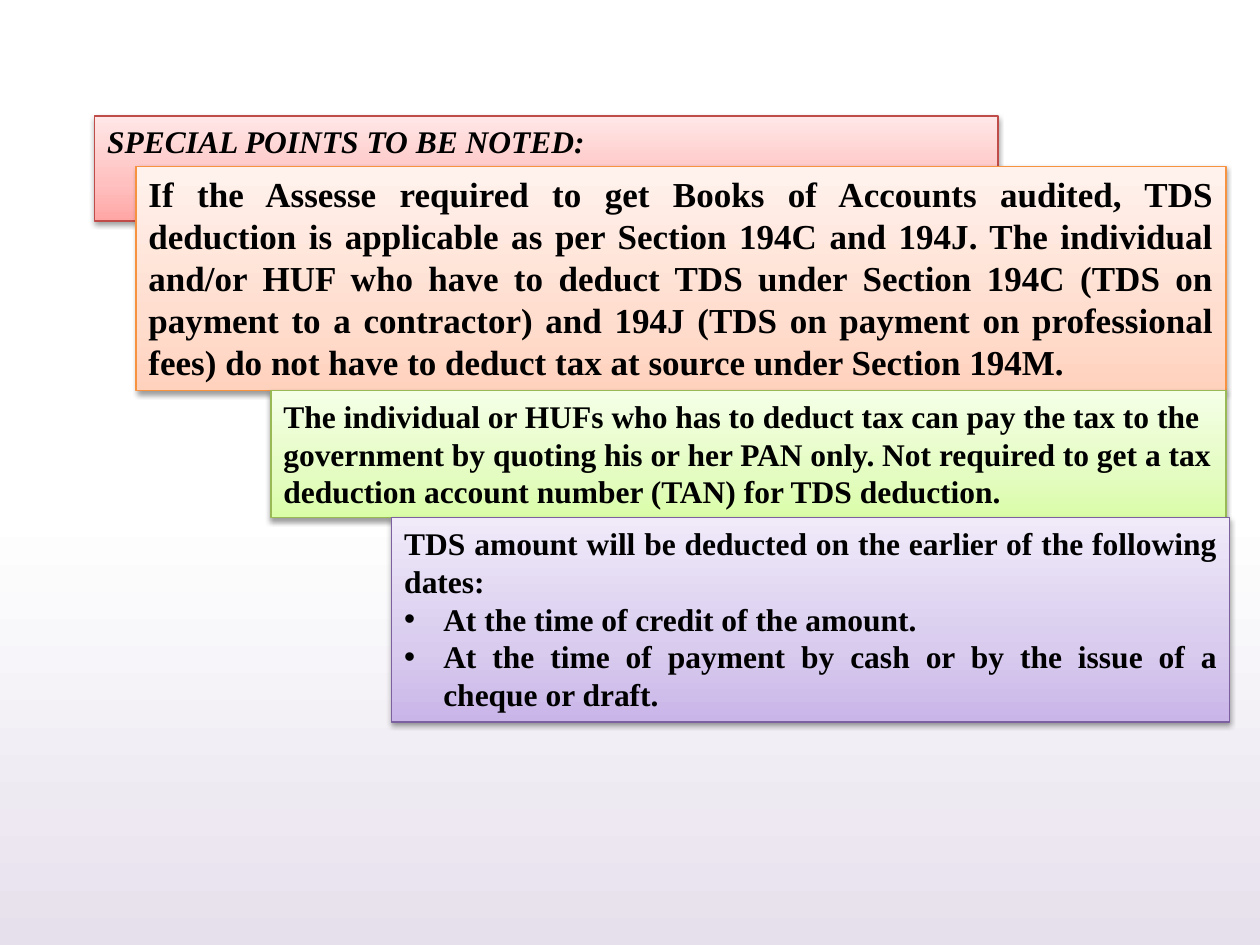
"""Build a slide of four stepped boxes with special points on TDS."""
from lxml.etree import SubElement
from pptx import Presentation
from pptx.dml.color import RGBColor
from pptx.enum.shapes import MSO_SHAPE as Shape
from pptx.enum.text import MSO_ANCHOR as Anchor, MSO_AUTO_SIZE as AutoSize, PP_ALIGN as Align
from pptx.oxml.ns import qn
from pptx.util import Inches, Pt

BACKGROUND = [(0, "FFFFFF"), (54, "FFFFFF"), (100, "E6E0EC")]
TOP = 0.92
INDENT = 0.31
BULLET = "•"
HEADING = dict(
    left=0.75, width=7.17, height=0.4, size=18, align=Align.LEFT, line="BF4C48",
    colors=("FFA6A5", "FFC0BF", "FFE7E7"), text=["SPECIAL POINTS TO BE NOTED:"])
POINTS = [
    dict(left=1.08, width=8.65, height=1.78, size=20, align=Align.JUSTIFY, line="F69240",
         colors=("FFD2BD", "FFDED0", "FFF2ED"),
         text=["If the Assesse required to get Books of Accounts audited, TDS deduction is "
               "applicable as per Section 194C and 194J. The individual and/or HUF who have to "
               "deduct TDS under Section 194C (TDS on payment to a contractor) and 194J (TDS on "
               "payment on professional fees) do not have to deduct tax at source under "
               "Section 194M."]),
    dict(left=2.15, width=7.58, height=1.01, size=18, align=Align.LEFT, line="98B955",
         colors=("DAFDA7", "E4FCC2", "F5FFE7"),
         text=["The individual or HUFs who has to deduct tax can pay the tax to the government "
               "by quoting his or her PAN only. Not required to get a tax deduction account "
               "number (TAN) for TDS deduction."]),
    dict(left=3.11, width=6.65, height=1.62, size=18, align=Align.JUSTIFY, line="7D60A0",
         colors=("C9B5E8", "D8CBEE", "F0EAF9"),
         text=["TDS amount will be deducted on the earlier of the following dates:"],
         bullets=["At the time of credit of the amount.",
                  "At the time of payment by cash or by the issue of a cheque or draft."]),
]


def rgb(color):
    """Turn a hex string into a colour."""
    return RGBColor.from_string(color)


def set_gradient(fill, owner, stops, angle):
    """Give a fill gradient stops at percentages."""
    fill.gradient()
    fill.gradient_angle = angle
    stop_list = owner.find(".//" + qn("a:gsLst"))
    for stop in list(stop_list):
        stop_list.remove(stop)
    for position, color in stops:
        stop = SubElement(stop_list, qn("a:gs"), pos=str(position * 1000))
        SubElement(stop, qn("a:srgbClr"), val=color)


def add_shadow(shape):
    """Put a soft shadow below a shape."""
    shape.shadow.inherit = False
    effects = shape._element.spPr.find(qn("a:effectLst"))
    shadow = SubElement(effects, qn("a:outerShdw"), blurRad=str(Pt(3.1)), dist=str(Pt(1.6)),
                        dir="5400000", rotWithShape="0")
    color = SubElement(shadow, qn("a:srgbClr"), val="000000")
    SubElement(color, qn("a:alpha"), val="38000")


def add_bullet(paragraph):
    """Give a paragraph a hanging bullet."""
    properties = paragraph._p.get_or_add_pPr()
    properties.set("marL", str(Inches(INDENT)))
    properties.set("indent", str(Inches(-INDENT)))
    SubElement(properties, qn("a:buFont"), typeface="Arial")
    SubElement(properties, qn("a:buChar"), char=BULLET)


def fill_box(shape, box, italic=False):
    """Format a box and write its paragraphs."""
    set_gradient(shape.fill, shape._element.spPr, zip((0, 35, 100), box["colors"]), 90)
    shape.line.color.rgb = rgb(box["line"])
    shape.line.width = Pt(0.75)
    add_shadow(shape)
    frame = shape.text_frame
    frame.word_wrap = True
    frame.auto_size = AutoSize.SHAPE_TO_FIT_TEXT
    frame.vertical_anchor = Anchor.TOP
    bullets = box.get("bullets", [])
    frame.text = "\n".join(box["text"] + bullets)
    for index, paragraph in enumerate(frame.paragraphs):
        if index >= len(box["text"]):
            add_bullet(paragraph)
        paragraph.alignment = box["align"]
        font = paragraph.font
        font.name, font.size = "Times New Roman", Pt(box["size"])
        font.bold, font.italic = True, italic
        font.color.rgb = rgb("000000")


def main():
    """Stack the boxes and save the presentation."""
    presentation = Presentation()
    presentation.slide_width, presentation.slide_height = Inches(10), Inches(7.5)
    slide = presentation.slides.add_slide(presentation.slide_layouts[5])
    set_gradient(slide.background.fill, slide._element, BACKGROUND, 270)

    top = TOP
    for box in [HEADING] + POINTS:
        place = [Inches(value) for value in (box["left"], top, box["width"], box["height"])]
        if box is HEADING:
            shape = slide.shapes.title
            shape.left, shape.top, shape.width, shape.height = place
        else:
            shape = slide.shapes.add_shape(Shape.RECTANGLE, *place)
        fill_box(shape, box, italic=box is HEADING)
        top += box["height"]
    presentation.save("out.pptx")


if __name__ == "__main__":
    main()
